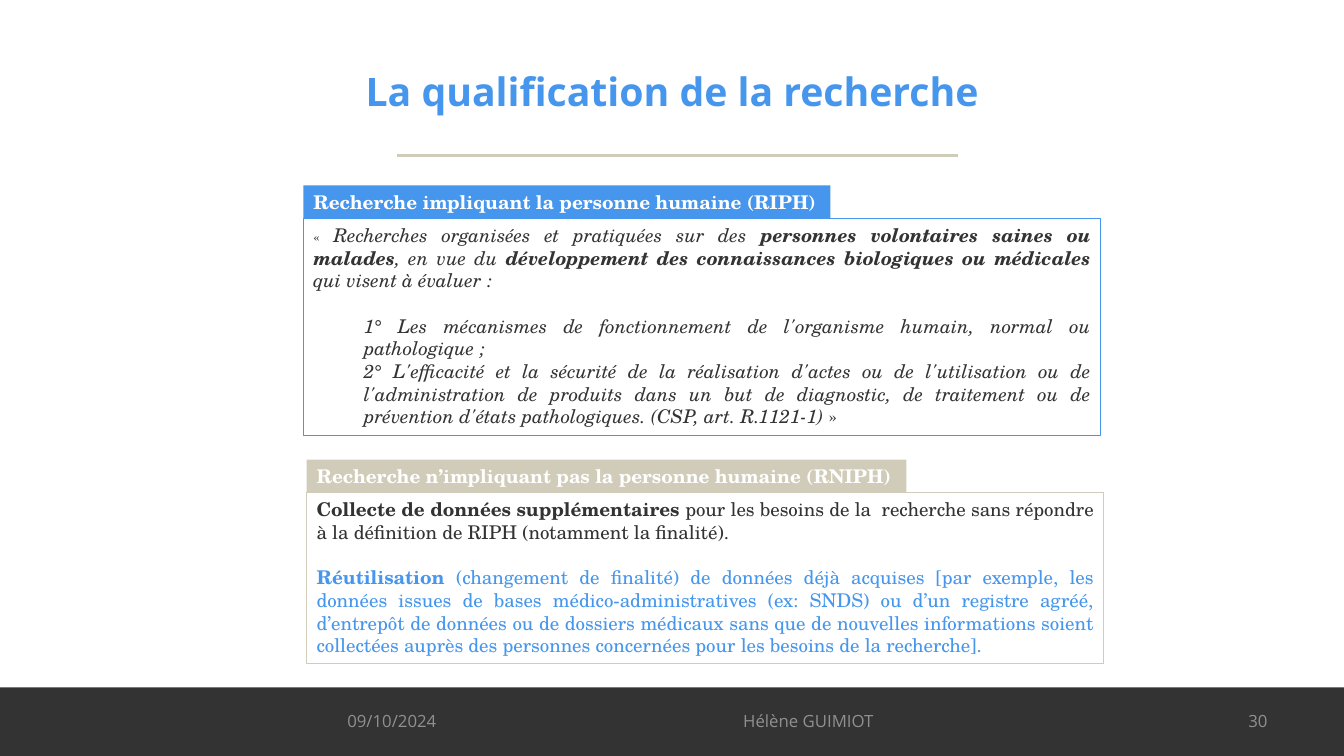
import pptx
import pptx.dml.color
import pptx.enum.shapes
import pptx.enum.text
import pptx.oxml.ns
import pptx.util
import lxml.etree

Pt = pptx.util.Pt
RGBColor = pptx.dml.color.RGBColor
ALIGN = pptx.enum.text.PP_ALIGN
ANCHOR = pptx.enum.text.MSO_ANCHOR

BLUE = RGBColor(0x45, 0x96, 0xEC)
SAND = RGBColor(0xD1, 0xCC, 0xB9)
DARK = RGBColor(0x33, 0x33, 0x33)
GREY = RGBColor(0x90, 0x90, 0x90)
WHITE = RGBColor(0xFF, 0xFF, 0xFF)

SANS = "Open Sans"
SERIF = "TeX Gyre Schola"
BODY_SIZE = 13.5
BLANK_LINE = 16.2
PANEL_WIDTH = 569.5
HEADING_HEIGHT = 23.75


class SlideWriter:
    """Draws the elements of one slide in a shared style."""

    def __init__(self, page):
        self.page = page

    def rectangle(self, left, top, width, height, fill=None, line=None):
        box = self.page.shapes.add_shape(
            pptx.enum.shapes.MSO_SHAPE.RECTANGLE,
            Pt(left), Pt(top), Pt(width), Pt(height))
        box.shadow.inherit = False
        if fill is None:
            box.fill.background()
        else:
            box.fill.solid()
            box.fill.fore_color.rgb = fill
        if line is None:
            box.line.fill.background()
        else:
            box.line.color.rgb = line
            box.line.width = Pt(0.75)
        box.text_frame.vertical_anchor = ANCHOR.TOP
        return box

    def rule(self, left, right, top):
        line = self.page.shapes.add_connector(
            pptx.enum.shapes.MSO_CONNECTOR.STRAIGHT,
            Pt(left), Pt(top), Pt(right), Pt(top))
        line.line.color.rgb = SAND
        line.line.width = Pt(2.25)
        properties = line._element.spPr
        lxml.etree.SubElement(properties, pptx.oxml.ns.qn("a:effectLst"))

    def label(self, text, left, top, width, height, align, size, color, bold=False):
        box = self.page.shapes.add_textbox(Pt(left), Pt(top), Pt(width), Pt(height))
        frame = box.text_frame
        frame.word_wrap = True
        frame.vertical_anchor = ANCHOR.MIDDLE
        frame.text = text
        para = frame.paragraphs[0]
        para.alignment = align
        self.style(para.runs[0], SANS, size, color, bold)

    def style(self, span, font, size, color, bold=False, italic=False):
        span.font.name = font
        span.font.size = Pt(size)
        span.font.color.rgb = color
        span.font.bold = bold
        span.font.italic = italic

    def panel(self, left, top, height, color, heading, heading_width, paragraphs):
        body_top = top + HEADING_HEIGHT
        body = self.rectangle(left, body_top, PANEL_WIDTH, height, line=color)
        frame = body.text_frame
        frame.word_wrap = True
        for index, (text_color, indent, gap, spans) in enumerate(paragraphs):
            para = frame.paragraphs[0] if index == 0 else frame.add_paragraph()
            para.alignment = ALIGN.JUSTIFY
            if indent:
                para._p.get_or_add_pPr().set("marL", str(Pt(indent)))
            if gap:
                para.space_before = Pt(gap)
            for text, marks, size in spans:
                span = para.add_run()
                span.text = text
                self.style(span, SERIF, size, text_color, "b" in marks, "i" in marks)

        tab = self.rectangle(left, top, heading_width, HEADING_HEIGHT, fill=color)
        tab.text_frame.word_wrap = False
        tab.text_frame.text = heading
        title = tab.text_frame.paragraphs[0]
        title.alignment = ALIGN.LEFT
        self.style(title.runs[0], SERIF, BODY_SIZE, WHITE, bold=True)


RIPH = [
    (DARK, 0, 0, [
        ("«", "", 10.5),
        (" ", "", BODY_SIZE),
        ("Recherches organisées et pratiquées sur des ", "i", BODY_SIZE),
        ("personnes volontaires saines ou malades", "bi", BODY_SIZE),
        (", en vue du ", "i", BODY_SIZE),
        ("développement des connaissances biologiques ou médicales ", "bi", BODY_SIZE),
        ("qui visent à évaluer :", "i", BODY_SIZE)]),
    (DARK, 36, BLANK_LINE, [
        ("1° Les mécanismes de fonctionnement de l'organisme humain, normal ou "
         "pathologique ; ", "i", BODY_SIZE)]),
    (DARK, 36, 0, [
        ("2° L'efficacité et la sécurité de la réalisation d'actes ou de "
         "l'utilisation ou de l'administration de produits dans un but de "
         "diagnostic, de traitement ou de prévention d'états pathologiques. "
         "(CSP, art. R.1121-1)", "i", BODY_SIZE),
        (" »", "", BODY_SIZE)]),
]

RNIPH = [
    (DARK, 0, 0, [
        ("Collecte de données supplémentaires ", "b", BODY_SIZE),
        ("pour les besoins de la  recherche sans répondre à la définition de "
         "RIPH (notamment la finalité).", "", BODY_SIZE)]),
    (BLUE, 0, BLANK_LINE, [
        ("Réutilisation ", "b", BODY_SIZE),
        ("(changement de finalité) de données déjà acquises [par exemple, les "
         "données issues de bases médico-administratives (ex: SNDS) ou d’un "
         "registre agréé, d’entrepôt de données ou de dossiers médicaux sans "
         "que de nouvelles informations soient collectées auprès des personnes "
         "concernées pour les besoins de la recherche].", "", BODY_SIZE)]),
]

FOOTER = [
    ("09/10/2024", 241, 224, ALIGN.LEFT),
    ("Hélène GUIMIOT", 425.5, 304, ALIGN.CENTER),
    ("30", 688.5, 224, ALIGN.RIGHT),
]


def main():
    deck = pptx.Presentation()
    deck.slide_width = Pt(960)
    deck.slide_height = Pt(540)
    writer = SlideWriter(deck.slides.add_slide(deck.slide_layouts[6]))

    writer.rectangle(0, 491, 960, 49, fill=DARK)
    writer.rule(283.5, 684, 111.25)
    writer.label("La qualification de la recherche", 227.5, 35.5, 505, 59,
                 ALIGN.CENTER, 28, BLUE, bold=True)
    writer.panel(216.75, 132.5, 154.75, BLUE,
                 "Recherche impliquant la personne humaine (RIPH)", 376.5, RIPH)
    writer.panel(219, 328.25, 121.75, SAND,
                 "Recherche n’impliquant pas la personne humaine (RNIPH)", 428.5, RNIPH)
    for text, left, width, align in FOOTER:
        writer.label(text, left, 500.5, width, 28.75, align, 12, GREY)

    deck.save("out.pptx")


if __name__ == "__main__":
    main()
